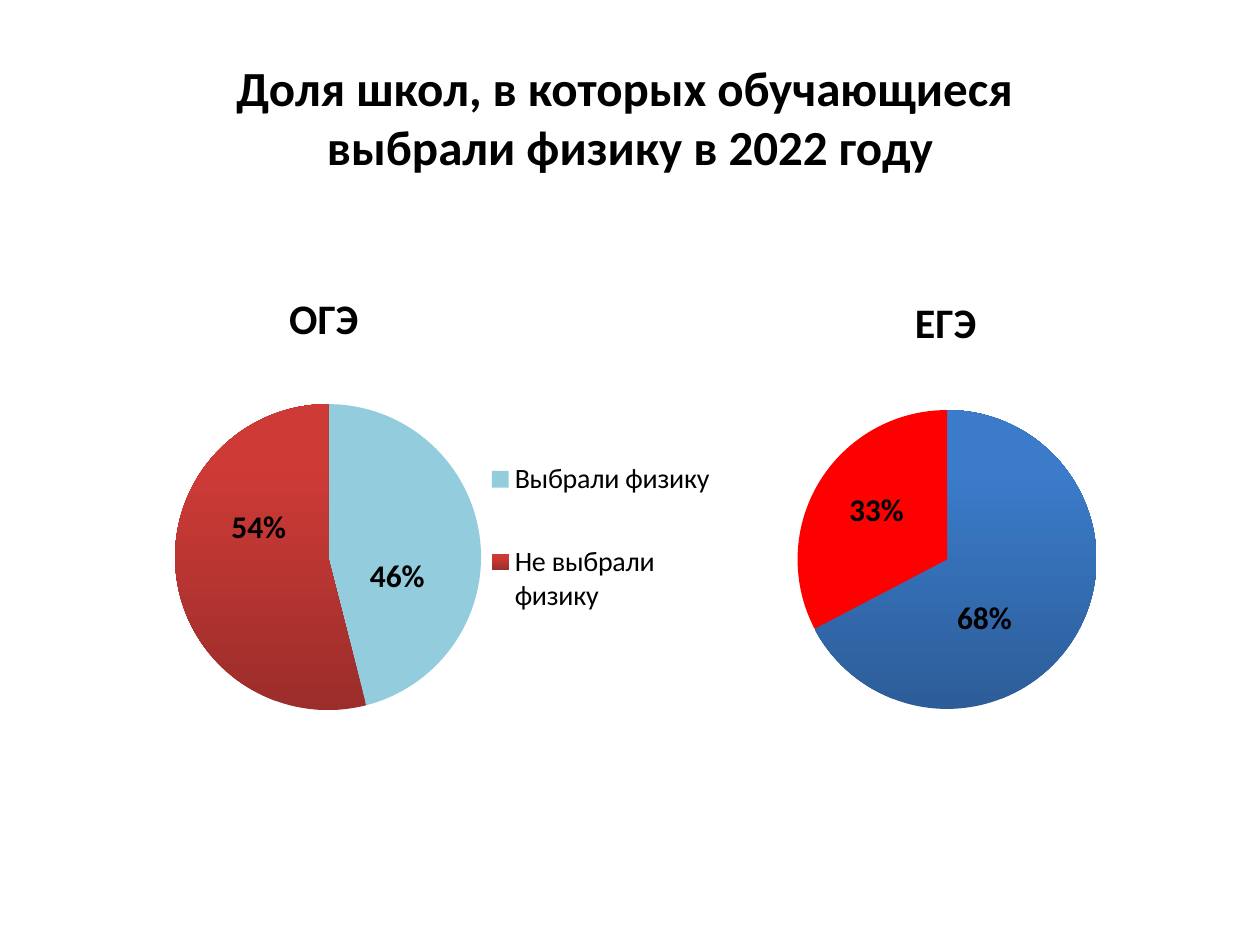
import pptx
import pptx.chart.data
import pptx.dml.color
import pptx.enum.chart
import pptx.enum.text
import pptx.oxml
import pptx.oxml.ns
import pptx.util
from pptx.util import Cm

THEME = {
    "font": "Calibri", "text": "000000",
    "heading": 28, "chart_title": 24, "share": 18, "body": 16,
    "light_blue": "93CDDD", "bright_red": "FF0000",
    "deep_red": ("9B2D2A", "CE3B37"), "deep_blue": ("2C5D98", "3B7BCA"),
}

HEADING = "Доля школ, в которых обучающиеся \vвыбрали физику в 2022 году"
HEADING_BOX = (1.27, 0.76, 22.86, 3.18)

# Boxes are in cm; layouts inside a chart are fractions of its box.
# Label shifts are measured from the centre of each slice.
EXAMS = [
    {
        "name": "ОГЭ", "box": (1.25, 5.5, 13.41, 9.8),
        "shares": {"Выбрали физику": 46, "Не выбрали физику": 54},
        "fills": ("light_blue", "deep_red"),
        "label_shifts": ((-0.01, 0.06), (0.01, -0.08)),
        "title_at": (0.33, 0.02), "plot": (0.17, 0.27, 0.46, 0.63),
        "legend": (0.63, 0.29, 0.36, 0.51),
    },
    {
        "name": "ЕГЭ", "box": (14.3, 5.15, 13.31, 10.39),
        "shares": {"1": 68, "2": 33},
        "fills": ("deep_blue", "bright_red"),
        "label_shifts": ((-0.04, 0.04), (-0.01, -0.02)),
        "title_at": (0.3, 0.06), "plot": (0.13, 0.3, 0.46, 0.58),
        "legend": None,
    },
]
SHARE_FORMAT = '0"%"'


def rgb(value):
    return pptx.dml.color.RGBColor.from_string(value)


def style_font(font, size, bold=False):
    font.name = THEME["font"]
    font.size = pptx.util.Pt(THEME[size])
    font.bold = bold
    font.color.rgb = rgb(THEME["text"])


def chart_part(chart, tag):
    return chart.element.find(".//" + pptx.oxml.ns.qn(tag))


def set_layout(part, index, fractions, inner=False, shift=False):
    """Place a chart part by fractions (x, y[, w, h]); index is its layout's child position."""
    for old in part.findall(pptx.oxml.ns.qn("c:layout")):
        part.remove(old)
    target = '<c:layoutTarget val="inner"/>' if inner else ""
    modes = "" if shift else '<c:xMode val="edge"/><c:yMode val="edge"/>'
    sizes = "".join(f'<c:{key} val="{value}"/>' for key, value in zip("xywh", fractions))
    part.insert(index, pptx.oxml.parse_xml(
        f'<c:layout {pptx.oxml.ns.nsdecls("c")}><c:manualLayout>'
        f'{target}{modes}{sizes}</c:manualLayout></c:layout>'))


def paint(fill, colour):
    """Fill with one colour, or with a (bottom, top) pair as a vertical gradient."""
    if isinstance(colour, str):
        fill.solid()
        fill.fore_color.rgb = rgb(colour)
        return
    fill.gradient()
    fill.gradient_angle = 90
    for stop, position, value in zip(fill.gradient_stops, (0, 0.8), colour):
        stop.position = position
        stop.color.rgb = rgb(value)


def add_heading(slide):
    frame = slide.shapes.add_textbox(*map(Cm, HEADING_BOX)).text_frame
    frame.word_wrap = True
    frame.vertical_anchor = pptx.enum.text.MSO_ANCHOR.MIDDLE
    paragraph = frame.paragraphs[0]
    paragraph.text = HEADING
    paragraph.alignment = pptx.enum.text.PP_ALIGN.CENTER
    for run in paragraph.runs:
        style_font(run.font, "heading", bold=True)


def label_slices(series, shifts):
    labels = series.data_labels
    labels.show_value = True
    labels.show_percentage = False
    labels.number_format = SHARE_FORMAT
    labels.number_format_is_linked = False
    labels.position = pptx.enum.chart.XL_LABEL_POSITION.CENTER
    style_font(labels.font, "share", bold=True)
    for index, shift in enumerate(shifts):
        label = series.points[index].data_label
        style_font(label.font, "share", bold=True)
        label.position = pptx.enum.chart.XL_LABEL_POSITION.CENTER
    label_parts = series.data_labels._element.findall(pptx.oxml.ns.qn("c:dLbl"))
    for part, shift in zip(label_parts, shifts):
        set_layout(part, 1, shift, shift=True)
        number_format = pptx.oxml.parse_xml(
            f'<c:numFmt {pptx.oxml.ns.nsdecls("c")} sourceLinked="0"/>')
        number_format.set("formatCode", SHARE_FORMAT)
        part.insert(2, number_format)


def add_exam_pie(slide, exam):
    data = pptx.chart.data.CategoryChartData()
    data.categories = list(exam["shares"])
    data.add_series(exam["name"], list(exam["shares"].values()))
    chart = slide.shapes.add_chart(
        pptx.enum.chart.XL_CHART_TYPE.PIE, *map(Cm, exam["box"]), data).chart
    style_font(chart.font, "body")

    title = chart.chart_title
    title.text_frame.text = exam["name"]
    style_font(title.text_frame.paragraphs[0].runs[0].font, "chart_title", bold=True)
    set_layout(chart_part(chart, "c:title"), 1, exam["title_at"])
    set_layout(chart_part(chart, "c:plotArea"), 0, exam["plot"], inner=True)

    chart.has_legend = exam["legend"] is not None
    if chart.has_legend:
        chart.legend.position = pptx.enum.chart.XL_LEGEND_POSITION.RIGHT
        chart.legend.include_in_layout = False
        style_font(chart.legend.font, "body")
        set_layout(chart_part(chart, "c:legend"), 1, exam["legend"])

    pie = chart.plots[0]
    pie.vary_by_categories = True
    series = pie.series[0]
    for index, fill_name in enumerate(exam["fills"]):
        slice_format = series.points[index].format
        paint(slice_format.fill, THEME[fill_name])
        slice_format.line.fill.background()
    label_slices(series, exam["label_shifts"])


def main():
    presentation = pptx.Presentation()
    presentation.slide_width, presentation.slide_height = Cm(25.4), Cm(19.05)
    slide = presentation.slides.add_slide(presentation.slide_layouts[6])
    add_heading(slide)
    for exam in EXAMS:
        add_exam_pie(slide, exam)
    presentation.save("out.pptx")


if __name__ == "__main__":
    main()
